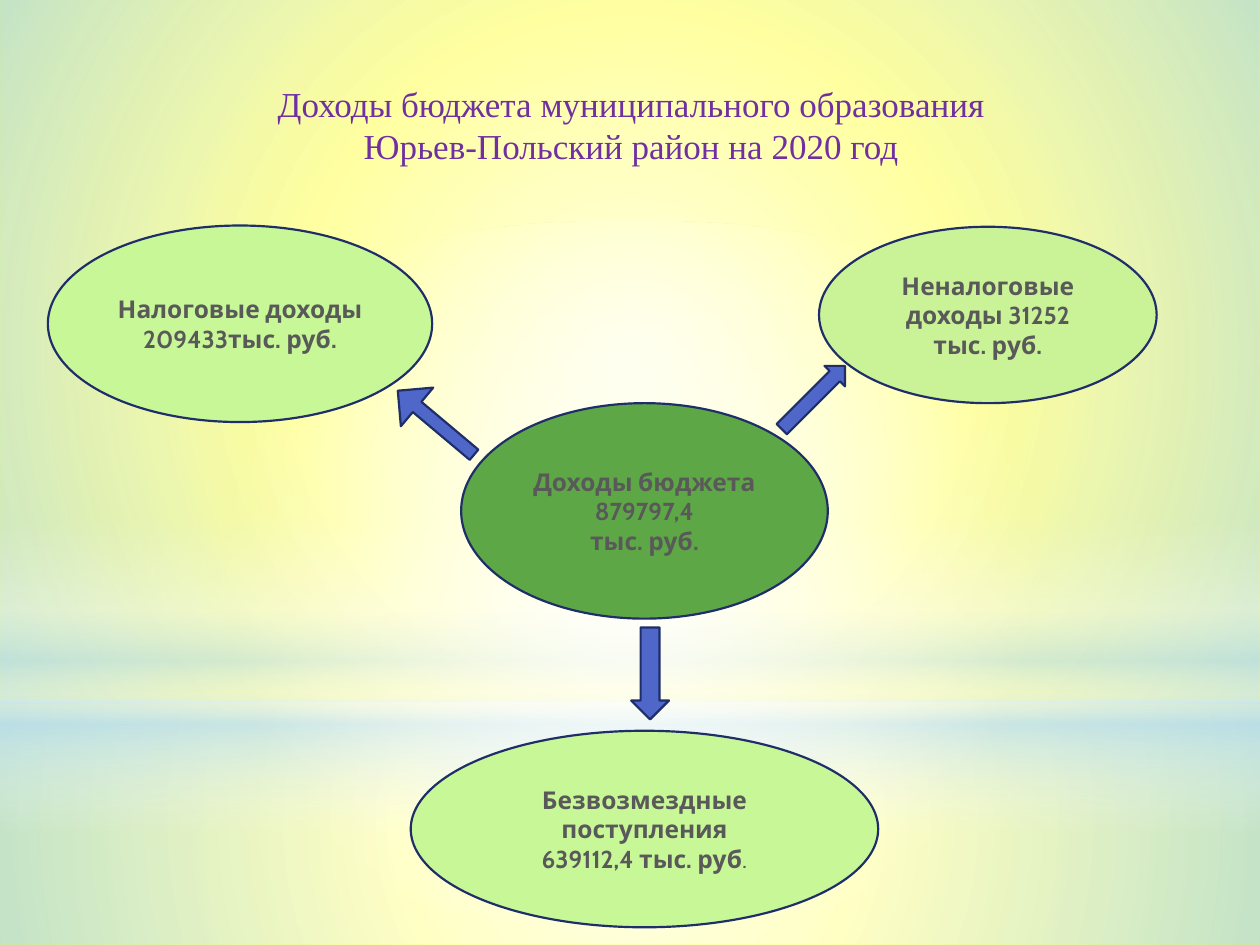
from lxml import etree
from pptx import Presentation
from pptx import util as u
from pptx.dml.color import RGBColor
from pptx.enum import shapes, text
from pptx.oxml.ns import nsdecls

COLORS = {
    "background": "FFFF00", "white": "FFFFFF", "sky": "B4DCFA",
    "title": "7030A0", "text": "595959", "outline": "1F2E69",
    "arrow": "4E67C8", "total": "5EA747", "source": "C7F797", "non_tax": "CAF297",
}
SHAPE = shapes.MSO_SHAPE
CELL = 0.1  # inches: the slide is a grid of 100 columns by 75 rows
CENTERED = ('<a:path path="circle"><a:fillToRect l="50000" t="50000" '
            'r="50000" b="50000"/></a:path>')
VERTICAL = '<a:lin ang="5400000" scaled="0"/>'


def color(name):
    return RGBColor.from_string(COLORS[name])


class BudgetSlide:
    def __init__(self, presentation):
        self.slide = presentation.slides.add_slide(presentation.slide_layouts[6])
        fill = self.slide.background.fill
        fill.solid()
        fill.fore_color.rgb = color("background")

    def box(self, area):
        return [u.Inches(round(cells * CELL, 2)) for cells in area]

    def set_text(self, shape, lines, font_name, size, color_name, bold=False):
        frame = shape.text_frame
        frame.word_wrap = True
        frame.vertical_anchor = text.MSO_ANCHOR.MIDDLE
        frame.text = "\n".join(lines)
        for paragraph in frame.paragraphs:
            paragraph.alignment = text.PP_ALIGN.CENTER
            font = paragraph.font
            font.name, font.size, font.bold = font_name, u.Pt(size), bold
            font.color.rgb = color(color_name)

    def title(self, area, lines):
        shape = self.slide.shapes.add_textbox(*self.box(area))
        self.set_text(shape, lines, "Times New Roman", 20, "title")

    def glow(self, kind, area, stops, direction):
        """Borderless gradient; each stop is position, colour, opacity in percent."""
        shape = self.slide.shapes.add_shape(kind, *self.box(area))
        shape.shadow.inherit = False
        shape.line.fill.background()
        shape.fill.background()
        stop_xml = "".join(
            f'<a:gs pos="{position * 1000}"><a:srgbClr val="{COLORS[name]}">'
            f'<a:alpha val="{opacity * 1000}"/></a:srgbClr></a:gs>'
            for position, name, opacity in stops)
        gradient = etree.fromstring(
            f'<a:gradFill {nsdecls("a")} rotWithShape="1"><a:gsLst>{stop_xml}</a:gsLst>'
            f'{direction}</a:gradFill>')
        properties = shape.element.spPr
        properties.replace(properties.find("{*}noFill"), gradient)

    def outlined(self, kind, area, fill_name):
        shape = self.slide.shapes.add_shape(kind, *self.box(area))
        shape.shadow.inherit = False
        shape.fill.solid()
        shape.fill.fore_color.rgb = color(fill_name)
        shape.line.color.rgb = color("outline")
        shape.line.width = u.Pt(1.25)
        return shape

    def bubble(self, kind, area, fill_name, lines):
        shape = self.outlined(kind, area, fill_name)
        self.set_text(shape, lines, "Cabin", 14, "text", bold=True)
        return shape

    def arrow(self, kind, area, rotation=0, adjustments=()):
        shape = self.outlined(kind, area, "arrow")
        shape.rotation = rotation
        for index, value in enumerate(adjustments):
            shape.adjustments[index] = value


def main():
    presentation = Presentation()
    presentation.slide_width = u.Inches(10)
    presentation.slide_height = u.Inches(7.5)
    page = BudgetSlide(presentation)

    # Background glow
    page.glow(SHAPE.RECTANGLE, (0, 55.8, 100, 19.2),
              [(0, "white", 91), (37, "white", 76), (100, "sky", 79)], CENTERED)
    page.glow(SHAPE.RECTANGLE, (0, 0, 100, 55.8),
              [(0, "white", 89), (48, "white", 62), (100, "sky", 79)], CENTERED)
    page.glow(SHAPE.RECTANGLE, (0, 41.2, 100, 25),
              [(0, "white", 0), (29, "white", 30), (45, "sky", 40),
               (55, "white", 26), (65, "sky", 60), (100, "white", 0)], VERTICAL)
    page.glow(SHAPE.OVAL, (0, 17.5, 100, 55.8),
              [(0, "white", 100), (56, "white", 0), (100, "white", 0)], CENTERED)

    # Title
    page.title((5.1, 4.4, 90, 11), ["Доходы бюджета муниципального образования",
                                    "Юрьев-Польский район на 2020 год"])

    # Income sources
    connector = SHAPE.FLOWCHART_CONNECTOR
    page.bubble(connector, (65, 18, 26.8, 14), "non_tax",
                ["Неналоговые доходы 31252 тыс. руб."])
    page.bubble(connector, (3.8, 17.9, 30.5, 15.6), "source",
                ["Налоговые доходы 209433тыс. руб."])
    grants = page.bubble(connector, (32.6, 58, 37.1, 15.6), "source",
                         ["Безвозмездные поступления", "639112,4 тыс. руб"])
    full_stop = grants.text_frame.paragraphs[-1].add_run()
    full_stop.text = "."
    full_stop.font.bold = False

    # Total and the arrows from it to the sources
    page.arrow(SHAPE.DOWN_ARROW, (50.1, 49.8, 3, 7.3))
    page.bubble(SHAPE.OVAL, (36.6, 32, 29.1, 17.1), "total",
                ["Доходы бюджета 879797,4", "тыс. руб."])
    page.arrow(SHAPE.UP_ARROW, (32.6, 29.6, 4, 7.9), -50, (0.265, 0.5))
    page.arrow(SHAPE.RIGHT_ARROW, (61, 30.4, 7.1, 2.3), -45)

    presentation.save("out.pptx")


if __name__ == "__main__":
    main()
